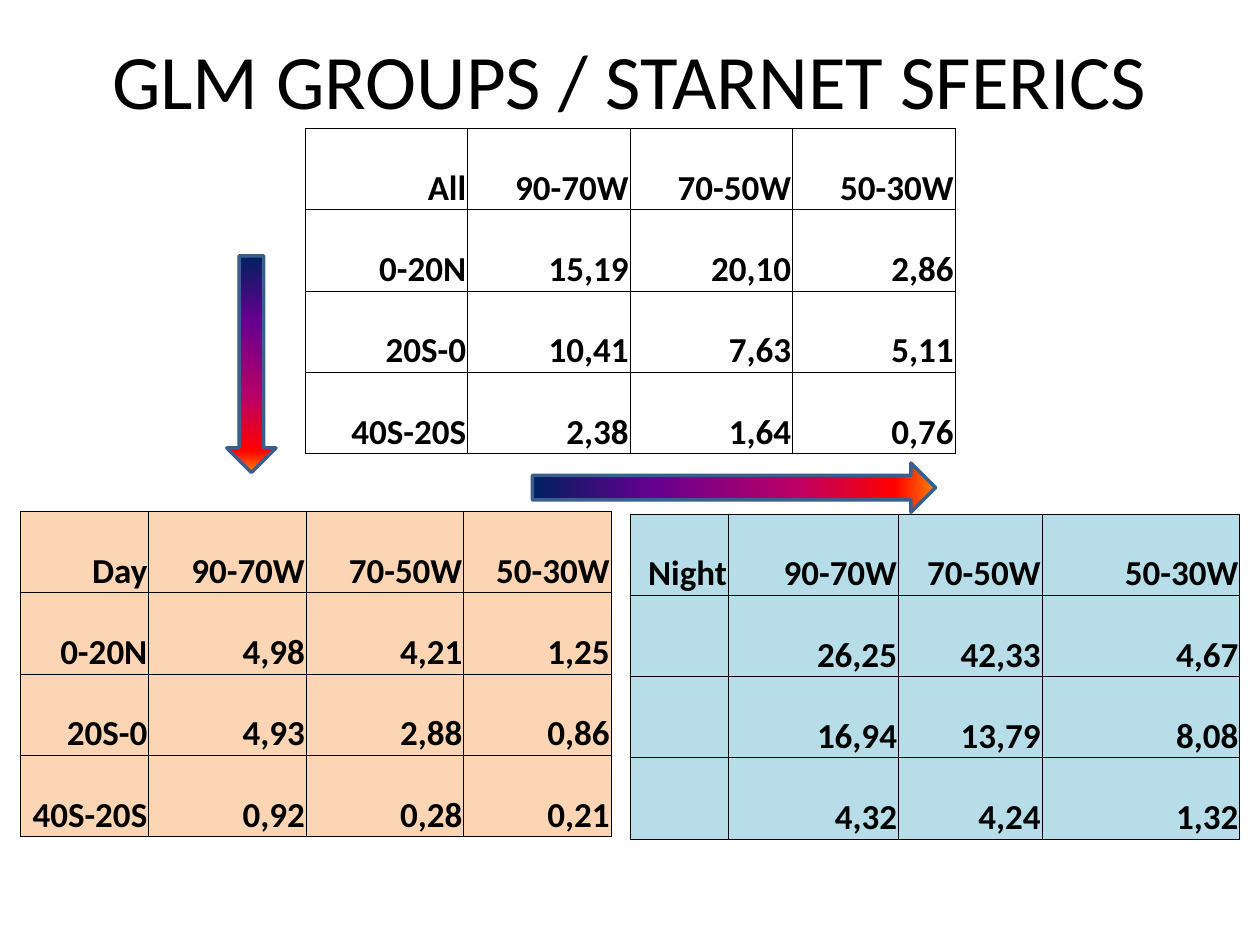
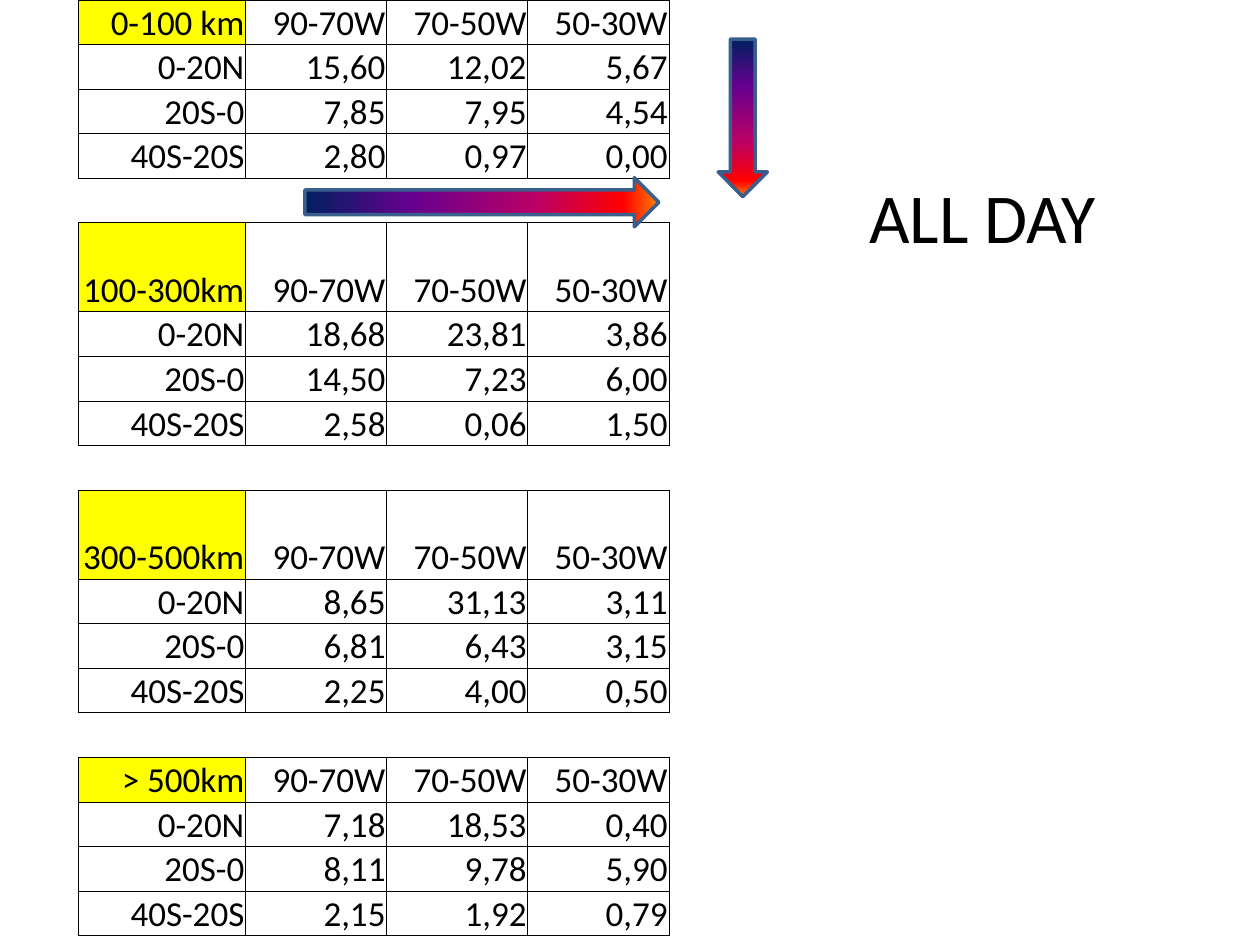
from dataclasses import dataclass

from lxml import etree
from pptx import Presentation
from pptx.dml.color import RGBColor
from pptx.enum.shapes import MSO_SHAPE
from pptx.enum.text import MSO_ANCHOR, MSO_AUTO_SIZE, PP_ALIGN
from pptx.oxml.ns import qn
from pptx.util import Inches, Pt


@dataclass(frozen=True)
class Theme:
    font: str = "Calibri"
    text: str = "000000"
    border: str = "000000"
    day: str = "FCD5B5"
    night: str = "B7DEE8"
    distance: str = "FFFF00"
    arrow_line: str = "3A5F8C"
    arrow_stops: tuple = ((0, "002060"), (30, "66008F"), (65, "BA0066"),
                          (90, "FF0000"), (100, "FF8200"))
    title_size: int = 44
    label_size: int = 40
    cell_size: int = 20
    border_width: float = 0.5
    arrow_line_width: int = 2


THEME = Theme()
LONGITUDES = ["90-70W", "70-50W", "50-30W"]
LATITUDES = ["0-20N", "20S-0", "40S-20S"]
COLUMN_COUNT = len(LONGITUDES) + 1
GAP_ROW = [""] * COLUMN_COUNT
ARROW_WIDTH = 0.39

ALL_RATIOS = ["15,19 20,10 2,86", "10,41 7,63 5,11", "2,38 1,64 0,76"]
DAY_RATIOS = ["4,98 4,21 1,25", "4,93 2,88 0,86", "0,92 0,28 0,21"]
NIGHT_RATIOS = ["26,25 42,33 4,67", "16,94 13,79 8,08", "4,32 4,24 1,32"]
DISTANCE_RATIOS = {
    "0-100 km": ["15,60 12,02 5,67", "7,85 7,95 4,54", "2,80 0,97 0,00"],
    "100-300km": ["18,68 23,81 3,86", "14,50 7,23 6,00", "2,58 0,06 1,50"],
    "300-500km": ["8,65 31,13 3,11", "6,81 6,43 3,15", "2,25 4,00 0,50"],
    "> 500km": ["7,18 18,53 0,40", "8,11 9,78 5,90", "2,15 1,92 0,79"],
}
TALL_HEADERS = ("100-300km", "300-500km")


def ratio_rows(name, ratios, latitudes=LATITUDES):
    """Return the header row and one row of ratios for each latitude band."""
    return [[name, *LONGITUDES]] + [
        [latitude, *line.split()] for latitude, line in zip(latitudes, ratios)]


def style_font(font, size, bold=False):
    font.name = THEME.font
    font.size = Pt(size)
    font.bold = bold
    font.color.rgb = RGBColor.from_string(THEME.text)


def add_color(parent, color):
    etree.SubElement(parent, qn("a:srgbClr"), val=color)


def set_borders(cell, sides):
    """Draw the named sides (L, R, T, B) and clear the others."""
    properties = cell._tc.get_or_add_tcPr()
    for side in "LRTB":
        line = etree.SubElement(properties, qn(f"a:ln{side}"),
                                w=str(Pt(THEME.border_width)))
        if side in sides:
            add_color(etree.SubElement(line, qn("a:solidFill")), THEME.border)
        else:
            etree.SubElement(line, qn("a:noFill"))


def fill_cell(cell, text, sides, color, bold):
    set_borders(cell, sides)
    if color:
        cell.fill.solid()
        cell.fill.fore_color.rgb = RGBColor.from_string(color)
    else:
        cell.fill.background()
    cell.margin_left = cell.margin_right = cell.margin_top = Inches(0.01)
    cell.margin_bottom = 0
    cell.vertical_anchor = MSO_ANCHOR.BOTTOM
    paragraph = cell.text_frame.paragraphs[0]
    paragraph.alignment = PP_ALIGN.RIGHT
    style_font(paragraph.font, THEME.cell_size, bold)
    if text:
        paragraph.text = text
    else:
        etree.SubElement(paragraph._p, qn("a:endParaRPr"),
                         sz=str(THEME.cell_size * 100))


def add_ratio_table(slide, left, top, widths, heights, rows,
                    color_of=lambda text, column: None, bold=False):
    frame = slide.shapes.add_table(
        len(rows), COLUMN_COUNT, Inches(left), Inches(top),
        Inches(sum(widths)), Inches(sum(heights)))
    table = frame.table
    table.first_row = table.horz_banding = False
    for column, width in zip(table.columns, widths):
        column.width = Inches(width)
    for row, height, texts in zip(table.rows, heights, rows):
        row.height = Inches(height)
        sides = "TB" if texts is GAP_ROW else "LRTB"
        for index, (cell, text) in enumerate(zip(row.cells, texts)):
            fill_cell(cell, text, sides, color_of(text, index), bold)


def add_gradient_arrow(slide, left, top, length, rotation=0):
    arrow = slide.shapes.add_shape(
        MSO_SHAPE.DOWN_ARROW, Inches(left), Inches(top),
        Inches(ARROW_WIDTH), Inches(length))
    arrow.rotation = rotation
    arrow.shadow.inherit = False
    arrow.line.color.rgb = RGBColor.from_string(THEME.arrow_line)
    arrow.line.width = Pt(THEME.arrow_line_width)
    arrow.fill.gradient()
    arrow.fill.gradient_angle = 270
    stops = arrow._element.spPr.find(qn("a:gradFill")).find(qn("a:gsLst"))
    for stop in list(stops):
        stops.remove(stop)
    for position, color in THEME.arrow_stops:
        add_color(etree.SubElement(stops, qn("a:gs"), pos=str(position * 1000)),
                  color)


def set_title(slide, text):
    title = slide.shapes.title
    title.left, title.top = Inches(0.5), Inches(0)
    title.width, title.height = Inches(9), Inches(1.25)
    title.text_frame.vertical_anchor = MSO_ANCHOR.MIDDLE
    paragraph = title.text_frame.paragraphs[0]
    paragraph.text = text
    paragraph.alignment = PP_ALIGN.CENTER
    style_font(paragraph.font, THEME.title_size)


def add_label(slide, left, top, width, height, text):
    box = slide.shapes.add_textbox(
        Inches(left), Inches(top), Inches(width), Inches(height))
    box.text_frame.word_wrap = False
    box.text_frame.auto_size = MSO_AUTO_SIZE.SHAPE_TO_FIT_TEXT
    paragraph = box.text_frame.paragraphs[0]
    paragraph.text = text
    style_font(paragraph.font, THEME.label_size)


def build_day_night_slide(presentation):
    slide = presentation.slides.add_slide(presentation.slide_layouts[5])
    set_title(slide, "GLM GROUPS / STARNET SFERICS")
    no_latitudes = [""] * len(LATITUDES)
    tables = [
        (2.42, 1.02, [1.29] * COLUMN_COUNT, None,
         ratio_rows("All", ALL_RATIOS)),
        (0.16, 4.06, [1.02, 1.25, 1.25, 1.17], THEME.day,
         ratio_rows("Day", DAY_RATIOS)),
        (5, 4.08, [0.78, 1.35, 1.14, 1.57], THEME.night,
         ratio_rows("Night", NIGHT_RATIOS, no_latitudes)),
    ]
    for left, top, widths, color, rows in tables:
        heights = [2.58 / len(rows)] * len(rows)
        add_ratio_table(slide, left, top, widths, heights, rows,
                        lambda text, column: color, bold=True)
    add_gradient_arrow(slide, 1.8, 2.03, 1.72)
    add_gradient_arrow(slide, 5.63, 2.27, 3.2, rotation=270)


def build_distance_slide(presentation):
    slide = presentation.slides.add_slide(presentation.slide_layouts[6])
    rows = []
    for distance, ratios in DISTANCE_RATIOS.items():
        if rows:
            rows.append(GAP_ROW)
        rows += ratio_rows(distance, ratios)
    row_height = 7.43 / (len(rows) + len(TALL_HEADERS))
    heights = [row_height * (2 if row[0] in TALL_HEADERS else 1)
               for row in rows]

    def distance_color(text, column):
        is_distance = column == 0 and text in DISTANCE_RATIOS
        return THEME.distance if is_distance else None

    add_ratio_table(slide, 0.62, 0, [1.33, 1.12, 1.12, 1.12], heights, rows,
                    distance_color)
    add_label(slide, 6.8, 1.33, 2.02, 0.77, "ALL DAY")
    add_gradient_arrow(slide, 5.7, 0.31, 1.25)
    add_gradient_arrow(slide, 3.63, 0.2, 2.81, rotation=270)


def main():
    presentation = Presentation()
    presentation.slide_width = Inches(10)
    presentation.slide_height = Inches(7.5)
    build_day_night_slide(presentation)
    build_distance_slide(presentation)
    presentation.save("out.pptx")


if __name__ == "__main__":
    main()
